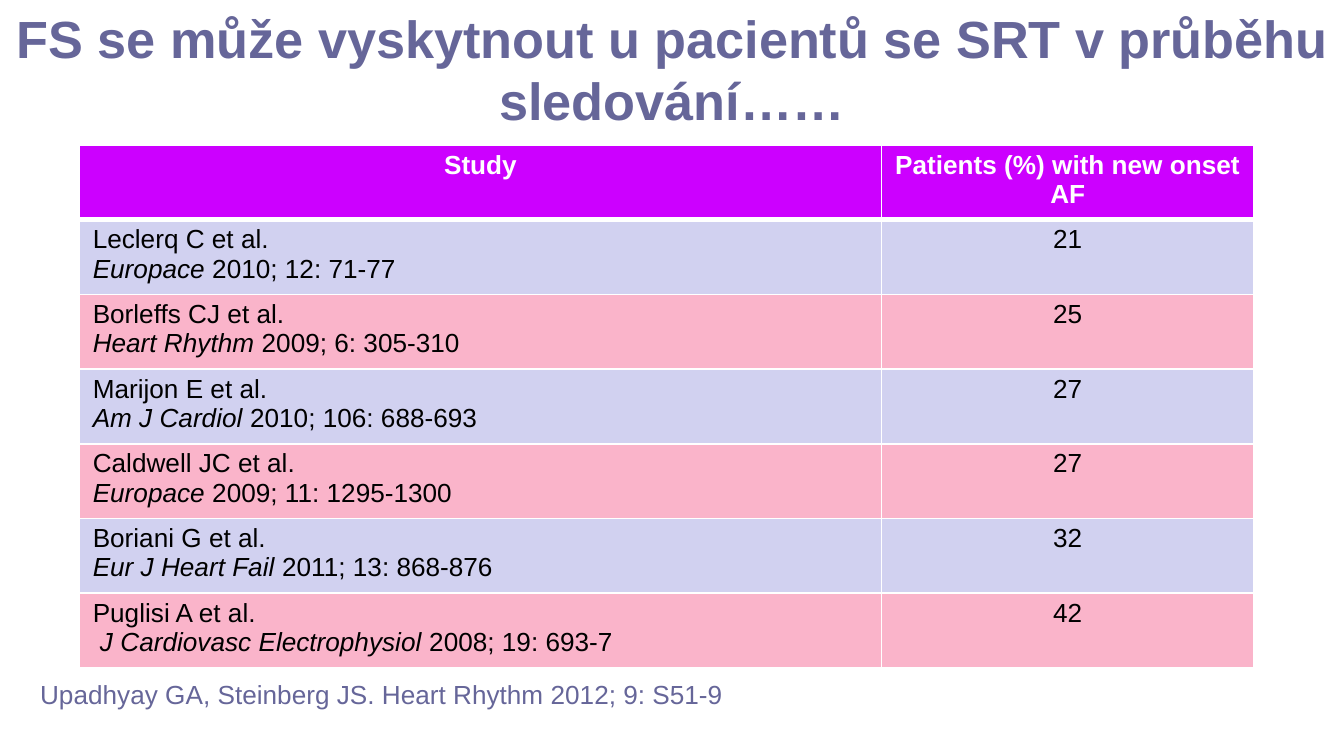
from lxml.etree import SubElement
from pptx import Presentation
from pptx.dml.color import RGBColor
from pptx.enum.text import MSO_ANCHOR, MSO_AUTO_SIZE, PP_ALIGN
from pptx.oxml.ns import qn
from pptx.util import Inches, Pt

FONT = "Arial"
SLATE = RGBColor(0x66, 0x66, 0x99)
MAGENTA = RGBColor(0xCC, 0x00, 0xFF)
LAVENDER = RGBColor(0xD1, 0xD1, 0xF0)
PINK = RGBColor(0xFA, 0xB4, 0xCA)
WHITE = RGBColor(0xFF, 0xFF, 0xFF)
BLACK = RGBColor(0x00, 0x00, 0x00)

SLIDE_W = Inches(10)
SLIDE_H = SLIDE_W * 9 // 16
STUDY_WIDTH = Inches(5.97)
HEADING_BORDERS = {"a:lnL": 1, "a:lnR": 1, "a:lnT": 1, "a:lnB": 3}  # points

TITLE = "FS se může vyskytnout u pacientů se SRT v průběhu sledování……"
HEADINGS = ("Study", "Patients (%) with new onset AF")
# authors, journal, citation, patients (%)
STUDIES = [
    ("Leclerq C et al.", "Europace ", "2010; 12: 71-77", 21),
    ("Borleffs CJ et al.", "Heart Rhythm ", "2009; 6: 305-310", 25),
    ("Marijon E et al.", "Am J Cardiol ", "2010; 106: 688-693", 27),
    ("Caldwell JC et al.", "Europace ", "2009; 11: 1295-1300", 27),
    ("Boriani G et al.", "Eur J Heart Fail ", "2011; 13: 868-876", 32),
    ("Puglisi A et al.", " J Cardiovasc Electrophysiol ", "2008; 19: 693-7", 42),
]
SOURCE = "Upadhyay GA, Steinberg JS. Heart Rhythm 2012; 9: S51-9"


def style(paragraph, size, color, bold=False, align=PP_ALIGN.LEFT):
    paragraph.alignment = align
    font = paragraph.font
    font.name, font.size, font.bold = FONT, Pt(size), bold
    font.color.rgb = color


def format_cell(cell, color):
    cell.margin_top = cell.margin_bottom = Inches(0.04)
    cell.fill.solid()
    cell.fill.fore_color.rgb = color


def add_borders(cell, borders):
    """Draw white cell borders; they must precede the fill."""
    properties = cell._tc.get_or_add_tcPr()
    for position, (side, points) in enumerate(borders.items()):
        line = SubElement(properties, qn(side), w=str(Pt(points)))
        line_fill = SubElement(line, qn("a:solidFill"))
        SubElement(line_fill, qn("a:srgbClr"), val=str(WHITE))
        properties.insert(position, line)


def place_title(slide, box):
    title = slide.shapes.title
    title.left, title.top, title.width, title.height = box
    frame = title.text_frame
    frame.text = TITLE
    frame.word_wrap = True
    frame.auto_size = MSO_AUTO_SIZE.NONE
    frame.vertical_anchor = MSO_ANCHOR.MIDDLE
    style(frame.paragraphs[0], 28, SLATE, bold=True, align=PP_ALIGN.CENTER)


def place_studies(slide, box):
    table = slide.shapes.add_table(len(STUDIES) + 1, len(HEADINGS), *box).table
    study_column, patients_column = table.columns
    study_column.width = STUDY_WIDTH
    patients_column.width = box[2] - STUDY_WIDTH

    # Heading row
    for column, heading in enumerate(HEADINGS):
        cell = table.cell(0, column)
        cell.text = heading
        format_cell(cell, MAGENTA)
        add_borders(cell, HEADING_BORDERS)
        style(cell.text_frame.paragraphs[0], 14, WHITE, True, PP_ALIGN.CENTER)

    # One banded row for each study
    for row, (authors, journal, citation, patients) in enumerate(STUDIES, 1):
        study_cell, patients_cell = table.cell(row, 0), table.cell(row, 1)
        study_cell.text = authors
        reference = study_cell.text_frame.add_paragraph()
        journal_run = reference.add_run()
        journal_run.text = journal
        journal_run.font.italic = True
        reference.add_run().text = citation
        for paragraph in study_cell.text_frame.paragraphs:
            style(paragraph, 14, BLACK)
        patients_cell.text = str(patients)
        style(patients_cell.text_frame.paragraphs[0], 14, BLACK,
              align=PP_ALIGN.CENTER)
        for cell in (study_cell, patients_cell):
            format_cell(cell, LAVENDER if row % 2 else PINK)


def place_source(slide, box):
    frame = slide.shapes.add_textbox(*box).text_frame
    frame.word_wrap = True
    frame.auto_size = MSO_AUTO_SIZE.SHAPE_TO_FIT_TEXT
    frame.text = SOURCE
    style(frame.paragraphs[0], 14, SLATE)


def main():
    prs = Presentation()
    prs.slide_width, prs.slide_height = SLIDE_W, SLIDE_H
    slide = prs.slides.add_slide(prs.slide_layouts[5])
    place_title(slide, (0, Inches(0.04), SLIDE_W, Inches(0.94)))
    place_studies(slide, (Inches(0.59), Inches(1.08), Inches(8.74), Inches(3.89)))
    place_source(slide, (Inches(0.2), Inches(5), Inches(5.75), Inches(0.34)))
    prs.save("out.pptx")


if __name__ == "__main__":
    main()
